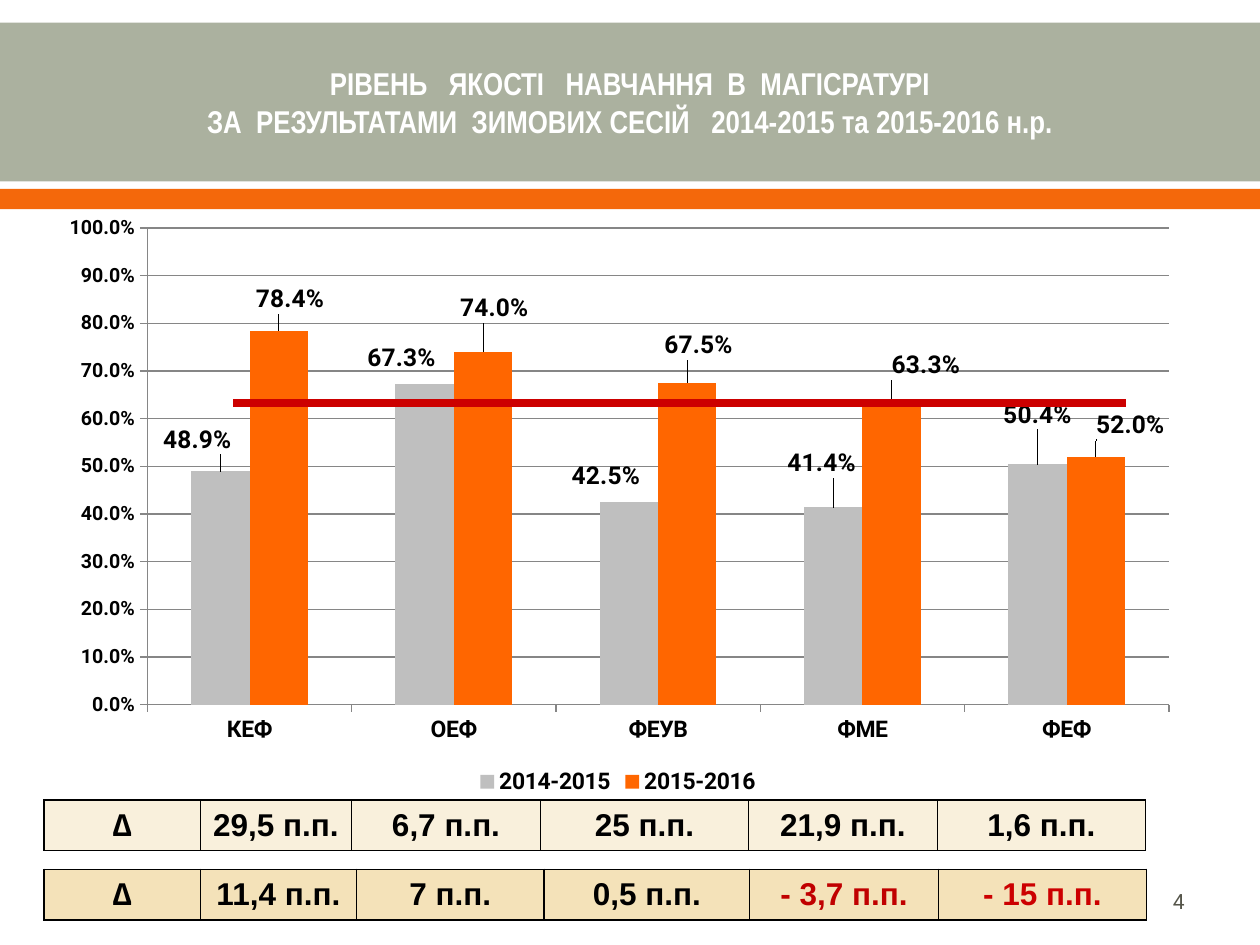
from pptx import Presentation
from pptx.chart.data import CategoryChartData
from pptx.dml.color import RGBColor
from pptx.enum.chart import XL_CHART_TYPE as ChartType, XL_LABEL_POSITION as LabelSpot
from pptx.enum.chart import XL_LEGEND_POSITION as LegendSpot, XL_TICK_MARK as Tick
from pptx.enum.shapes import MSO_CONNECTOR as Connector, MSO_SHAPE as Shape
from pptx.enum.text import MSO_ANCHOR as Anchor, PP_ALIGN as Align
from pptx.oxml import parse_xml
from pptx.oxml.ns import nsdecls
from pptx.util import Inches, Pt

COLUMNS, ROWS = 100, 75
TITLE = ("РІВЕНЬ   ЯКОСТІ   НАВЧАННЯ  В  МАГІСРАТУРІ\v"
         "ЗА  РЕЗУЛЬТАТАМИ  ЗИМОВИХ СЕСІЙ   2014-2015 та 2015-2016 н.р.")
FACULTIES = ["КЕФ", "ОЕФ", "ФЕУВ", "ФМЕ", "ФЕФ"]
SERIES = [
    ("2014-2015", "BFBFBF", [0.489, 0.673, 0.425, 0.414, 0.504],
     [(-0.02, -0.02), (-0.02, -0.01), (-0.02, -0.01), (-0.01, -0.04), (0, -0.05)]),
    ("2015-2016", "FF6600", [0.784, 0.74, 0.675, 0.633, 0.52],
     [(0.01, -0.02), (0.01, -0.04), (0.01, -0.03), (0.03, -0.03), (0.03, -0.02)]),
]
TABLES = [
    (63.5, "F9F0DC", [12.4, 12, 15, 16.5, 15, 16.5],
     ["∆", "29,5 п.п.", "6,7 п.п.", "25 п.п.", "21,9 п.п.", "1,6 п.п."], {}),
    (69, "F4E2B9", [12.4, 12.4, 14.9, 16.3, 15, 16.5],
     ["∆", "11,4 п.п.", "7 п.п.", "0,5 п.п.", "- 3,7 п.п.", "- 15 п.п."],
     {4: "C00000", 5: "CC0000"}),
]


def color(value):
    """Turn a hex string into a colour."""
    return RGBColor.from_string(value)


def style_font(font, size, ink="000000", bold=True, face="Roboto"):
    """Set the size, colour, weight and face of a font."""
    font.size, font.bold, font.name = Pt(size), bold, face
    font.color.rgb = color(ink)


def write(frame, text, align=Align.CENTER, **style):
    """Fill a text frame with one formatted paragraph."""
    frame.word_wrap = True
    frame.vertical_anchor = Anchor.MIDDLE
    para = frame.paragraphs[0]
    para.text, para.alignment = text, align
    for span in para.runs:
        style_font(span.font, **style)


def manual_layout(target="", **shares):
    """Make a chart layout from shares of the chart's size."""
    inner = f'<c:layoutTarget val="{target}"/>' if target else ""
    modes = '<c:xMode val="edge"/><c:yMode val="edge"/>' if target else ""
    sizes = "".join(f'<c:{name} val="{share}"/>' for name, share in shares.items())
    return parse_xml(f'<c:layout {nsdecls("c")}><c:manualLayout>{inner}{modes}{sizes}'
                     '</c:manualLayout></c:layout>')


class Canvas:
    """Hold the grid, the line style and the current slide."""

    grid_ink = "868686"

    def __init__(self, deck):
        """Size the deck and add a blank page."""
        deck.slide_width, deck.slide_height = Inches(10), Inches(7.5)
        self.cell = deck.slide_width / COLUMNS
        self.page = deck.slides.add_slide(deck.slide_layouts[6])

    def place(self, *units):
        """Turn grid units into lengths."""
        return [round(unit * self.cell) for unit in units]

    def band(self, top, height, fill):
        """Draw a full-width bar."""
        box = self.page.shapes.add_shape(Shape.RECTANGLE, *self.place(0, top, COLUMNS, height))
        box.shadow.inherit = False
        box.fill.solid()
        box.fill.fore_color.rgb = color(fill)
        box.line.fill.background()

    def text(self, spot, text, **style):
        """Add a text box."""
        write(self.page.shapes.add_textbox(*self.place(*spot)).text_frame, text, **style)

    def line(self, ends, ink, width):
        """Draw a straight line."""
        line = self.page.shapes.add_connector(Connector.STRAIGHT, *self.place(*ends))
        line.line.color.rgb, line.line.width = color(ink), Pt(width)
        line._element.spPr.append(parse_xml(f'<a:effectLst {nsdecls("a")}/>'))

    def table(self, left, top, height, widths, texts, fill, inks):
        """Add a one-row bordered table."""
        spot = self.place(left, top, sum(widths), height)
        table = self.page.shapes.add_table(1, len(widths), *spot).table
        table.first_row = table.horz_banding = False
        for index, (width, text) in enumerate(zip(self.place(*widths), texts)):
            table.columns[index].width = width
            box = table.cell(0, index)
            write(box.text_frame, text, size=18, face="Arial", ink=inks.get(index, "000000"))
            box.vertical_anchor = Anchor.MIDDLE
            self.border(box)
            box.fill.solid()
            box.fill.fore_color.rgb = color(fill)

    def border(self, box):
        """Give a table cell thin black edges."""
        for side in ("lnL", "lnR", "lnT", "lnB"):
            box._tc.get_or_add_tcPr().append(parse_xml(
                f'<a:{side} {nsdecls("a")} w="{Pt(1)}"><a:solidFill>'
                f'<a:srgbClr val="000000"/></a:solidFill></a:{side}>'))

    def chart(self, spot, categories, series):
        """Add the clustered column chart."""
        data = CategoryChartData(number_format="0.0%")
        data.categories = categories
        for name, _, values, _ in series:
            data.add_series(name, values)
        chart = self.page.shapes.add_chart(
            ChartType.COLUMN_CLUSTERED, *self.place(*spot), data).chart
        chart.has_title = False
        style_font(chart.font, 16.8, bold=False)
        chart.has_legend = True
        chart.legend.position, chart.legend.include_in_layout = LegendSpot.BOTTOM, False
        style_font(chart.legend.font, 13.1)
        self.axes(chart)
        plot = chart.plots[0]
        plot.gap_width, plot.overlap, plot.vary_by_categories = 150, 0, False
        for bars, (_, fill, _, shifts) in zip(plot.series, series):
            self.bars(bars, fill, shifts)
        area = chart._chartSpace.chart.plotArea
        for old in area.findall("{*}layout"):
            area.remove(old)
        area.insert(0, manual_layout("inner", x=0.09, y=0.04, w=0.89, h=0.8))

    def axes(self, chart):
        """Style both axes and the grid lines."""
        for axis, size in ((chart.category_axis, 13.1), (chart.value_axis, 11.2)):
            style_font(axis.tick_labels.font, size)
            axis.major_tick_mark = Tick.OUTSIDE
            axis.format.line.color.rgb = color(self.grid_ink)
        axis = chart.value_axis
        axis.minimum_scale, axis.maximum_scale, axis.major_unit = 0, 1, 0.1
        axis.tick_labels.number_format = "0.0%"
        axis.tick_labels.number_format_is_linked = False
        axis.has_major_gridlines = True
        axis.major_gridlines.format.line.color.rgb = color(self.grid_ink)

    def bars(self, bars, fill, shifts):
        """Fill one series and shift its value labels."""
        bars.format.fill.solid()
        bars.format.fill.fore_color.rgb = color(fill)
        labels = bars.data_labels
        labels.show_value, labels.position = True, LabelSpot.OUTSIDE_END
        labels.number_format, labels.number_format_is_linked = "0.0%", False
        style_font(labels.font, 14)
        for index, (across, down) in enumerate(shifts):
            label = bars.points[index].data_label
            style_font(label.font, 14)
            label.position = LabelSpot.OUTSIDE_END
            labels._element[index].insert(1, manual_layout(x=across, y=down))


def main():
    """Build the page and save the deck."""
    deck = Presentation()
    canvas = Canvas(deck)
    canvas.band(1.8, 12.6, "ABB19F")
    canvas.band(15, 1.6, "F4680B")
    canvas.text((71.7, 69.5, 23.3, 4), "4", align=Align.RIGHT, size=12, ink="55554A", bold=False)
    canvas.text((5, 2, 90, 12.2), TITLE, size=18, ink="FFFFFF", face="Arial Narrow")
    canvas.chart((3.5, 16.2, 91.1, 47.3), FACULTIES, SERIES)
    for top, fill, widths, texts, inks in TABLES:
        canvas.table(3.5, top, 3.8, widths, texts, fill, inks)
    canvas.line((18.5, 32, 89.4, 32), "CC0000", 4.5)
    deck.save("out.pptx")


if __name__ == "__main__":
    main()
